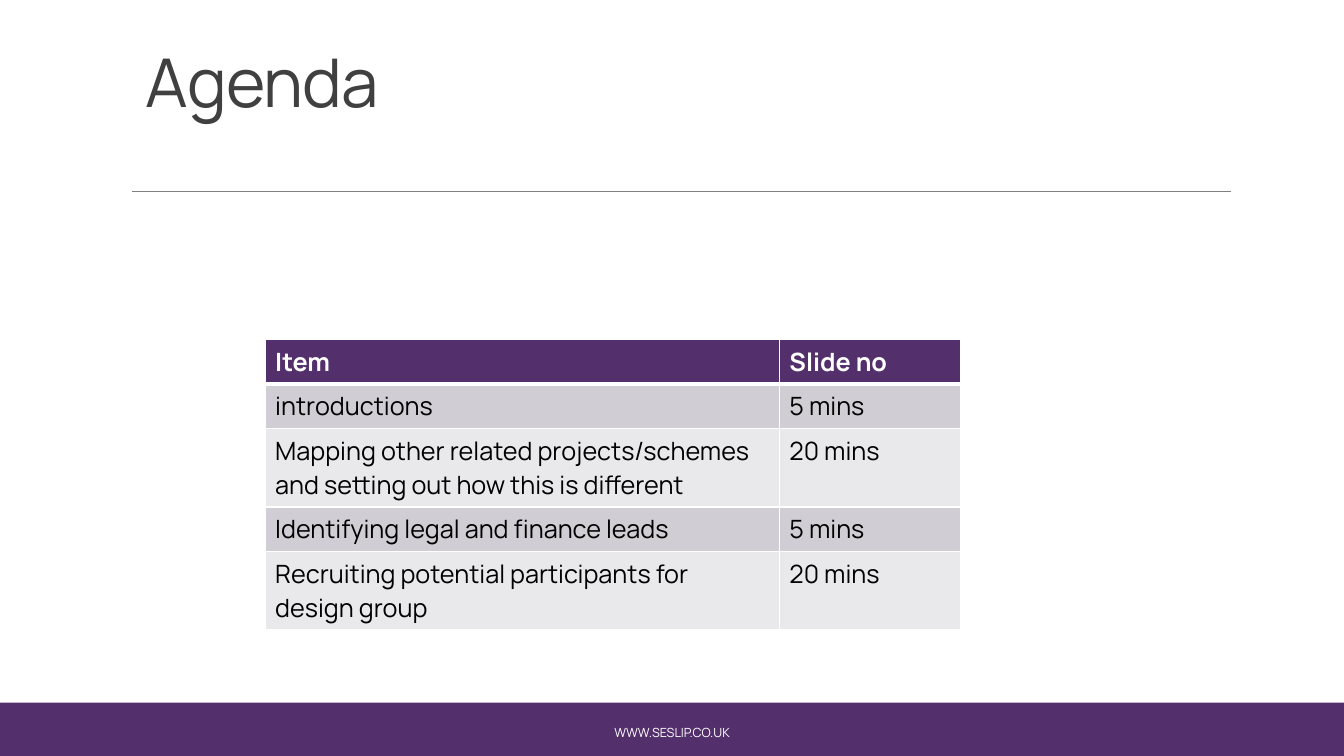
from lxml.etree import SubElement
from pptx import Presentation
from pptx.dml.color import RGBColor
from pptx.enum.shapes import MSO_CONNECTOR, MSO_SHAPE
from pptx.enum.text import MSO_ANCHOR, MSO_AUTO_SIZE, PP_ALIGN
from pptx.oxml.ns import qn
from pptx.util import Inches, Pt

PURPLE = RGBColor(0x53, 0x2F, 0x6B)
WHITE = RGBColor(0xFF, 0xFF, 0xFF)
BLACK = RGBColor(0, 0, 0)
CHARCOAL = RGBColor(0x40, 0x40, 0x40)
GREY = RGBColor(0x80, 0x80, 0x80)
BAND_DARK = RGBColor(0xD1, 0xCD, 0xD4)
BAND_LIGHT = RGBColor(0xE9, 0xE8, 0xEB)

FONT = "Manrope"
PAGE_WIDTH, PAGE_HEIGHT = 13.33, 7.5
COLUMN_WIDTHS = (5.1, 1.8)
LINE_HEIGHT = 0.34
ROW_PADDING = 0.1
AGENDA = (
    (1, "Item", "Slide no"),
    (1, "introductions", "5 mins"),
    (2, "Mapping other related projects/schemes and setting out how this is different", "20 mins"),
    (1, "Identifying legal and finance leads", "5 mins"),
    (2, "Recruiting potential participants for design group", "20 mins"),
)


def write(frame, text, size=18, color=BLACK, bold=False, align=PP_ALIGN.LEFT,
          anchor=MSO_ANCHOR.TOP, line_spacing=None, tracking=None):
    frame.word_wrap = True
    frame.vertical_anchor = anchor
    para = frame.paragraphs[0]
    para.alignment = align
    para.line_spacing = line_spacing
    span = para.add_run()
    span.text = text
    span.font.name = FONT
    span.font.size = Pt(size)
    span.font.bold = bold
    span.font.color.rgb = color
    if tracking is not None:
        span._r.get_or_add_rPr().set("spc", str(round(tracking * 100)))


def add_band(page, left, top, width, height):
    band = page.shapes.add_shape(MSO_SHAPE.RECTANGLE, *map(Inches, (left, top, width, height)))
    band.shadow.inherit = False
    band.fill.solid()
    band.fill.fore_color.rgb = PURPLE
    band.line.fill.background()


def add_footer(page, left, top, width, height):
    add_band(page, left, top, width, height)
    add_band(page, left, top - 0.03, width, 0.07)
    text_width = 5.27
    box = page.shapes.add_textbox(Inches(left + (width - text_width) / 2), Inches(top + 0.07),
                                  Inches(text_width), Inches(0.4))
    write(box.text_frame, "WWW.SESLIP.CO.UK", size=9, color=WHITE,
          align=PP_ALIGN.CENTER, anchor=MSO_ANCHOR.MIDDLE)


def add_rule(page, left, top, width):
    rule = page.shapes.add_connector(MSO_CONNECTOR.STRAIGHT, Inches(left), Inches(top),
                                     Inches(left + width), Inches(top))
    rule.line.color.rgb = GREY
    rule.line.width = Pt(0.5)
    SubElement(rule._element.spPr, qn("a:effectLst"))


def place_title(page, text, left, top, width, height):
    title = page.shapes.title
    title.left, title.top, title.width, title.height = map(Inches, (left, top, width, height))
    title.text_frame.auto_size = MSO_AUTO_SIZE.NONE
    write(title.text_frame, text, size=48, color=CHARCOAL, anchor=MSO_ANCHOR.BOTTOM,
          line_spacing=0.85, tracking=-0.5)


def set_borders(cell, **widths):
    properties = cell._tc.get_or_add_tcPr()
    for side in ("L", "R", "T", "B"):
        border = SubElement(properties, qn(f"a:ln{side}"), w=str(Pt(widths.get(side, 1))))
        fill = SubElement(border, qn("a:solidFill"))
        SubElement(fill, qn("a:srgbClr"), val=str(WHITE))


def add_agenda(page, left, top):
    heights = [ROW_PADDING + lines * LINE_HEIGHT for lines, *_ in AGENDA]
    table = page.shapes.add_table(len(AGENDA), len(COLUMN_WIDTHS), Inches(left), Inches(top),
                                  Inches(sum(COLUMN_WIDTHS)), Inches(sum(heights))).table
    for column, width in zip(table.columns, COLUMN_WIDTHS):
        column.width = Inches(width)
    for index, (row, height, (_, *texts)) in enumerate(zip(table.rows, heights, AGENDA)):
        row.height = Inches(height)
        header = index == 0
        band = BAND_DARK if index % 2 else BAND_LIGHT
        for cell, text in zip(row.cells, texts):
            set_borders(cell, T=3 if index == 1 else 1, B=3 if header else 1)
            cell.fill.solid()
            cell.fill.fore_color.rgb = PURPLE if header else band
            write(cell.text_frame, text, color=WHITE if header else BLACK, bold=header)


def build_agenda_page(deck):
    page = deck.slides.add_slide(deck.slide_layouts[5])
    add_footer(page, 0, 7, PAGE_WIDTH, 0.5)
    add_rule(page, 1.31, 1.9, 10.9)
    place_title(page, "Agenda", 1.34, -0.34, 11, 1.59)
    add_agenda(page, 2.63, 3.37)


def main():
    deck = Presentation()
    deck.slide_width, deck.slide_height = Inches(PAGE_WIDTH), Inches(PAGE_HEIGHT)
    build_agenda_page(deck)
    deck.save("out.pptx")


if __name__ == "__main__":
    main()
